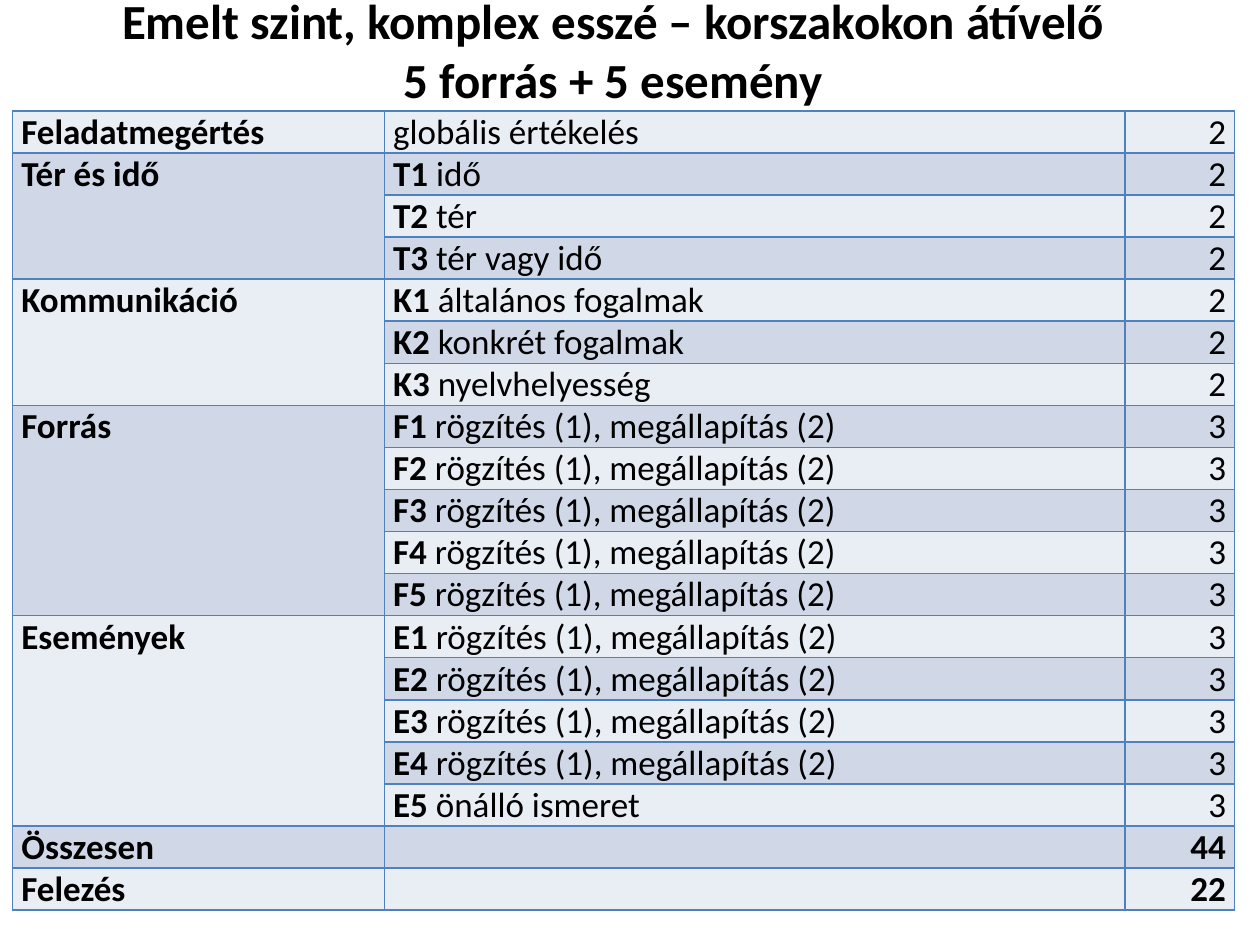
from lxml import etree
from pptx import Presentation
from pptx import util as u
from pptx.dml.color import RGBColor
from pptx.enum import text
from pptx.oxml import ns

TITLE = ["Emelt szint, komplex esszé – korszakokon átívelő", "5 forrás + 5 esemény"]
SOURCE_TASK = "rögzítés (1), megállapítás (2)"
GROUPS = [
    ("Feladatmegértés", "", ["globális értékelés"], 2),
    ("Tér és idő", "T", ["idő", "tér", "tér vagy idő"], 2),
    ("Kommunikáció", "K", ["általános fogalmak", "konkrét fogalmak", "nyelvhelyesség"], 2),
    ("Forrás", "F", [SOURCE_TASK] * 5, 3),
    ("Események", "E", [SOURCE_TASK] * 4 + ["önálló ismeret"], 3),
]
TOTALS = [("Összesen", 44), ("Felezés", 22)]
COLUMN_WIDTHS = [2.95, 5.88, 0.87]
TABLE_HEIGHT = 6.33
BANDS = ["E9EDF4", "D0D8E8"]
BORDER = "4F81BD"
BLACK = "000000"
LEFT = text.PP_ALIGN.LEFT
RIGHT = text.PP_ALIGN.RIGHT
CENTER = text.PP_ALIGN.CENTER
CELL_FORMAT = {
    "margin_left": u.Inches(0.07),
    "margin_right": u.Inches(0.07),
    "margin_top": 0,
    "margin_bottom": 0,
    "vertical_anchor": text.MSO_ANCHOR.TOP,
}
TITLE_BOX = {
    "left": u.Inches(0.1),
    "top": u.Inches(-0.13),
    "width": u.Inches(9.53),
    "height": u.Inches(1.04),
}
TITLE_FRAME = {
    "word_wrap": True,
    "auto_size": text.MSO_AUTO_SIZE.SHAPE_TO_FIT_TEXT,
    "vertical_anchor": text.MSO_ANCHOR.MIDDLE,
}


def apply_format(target, values):
    for name, value in values.items():
        setattr(target, name, value)


def set_color(color_format, hex_color):
    color_format.rgb = RGBColor.from_string(hex_color)


def write(paragraph, runs, size, alignment):
    paragraph.alignment = alignment
    for content, bold in runs:
        run = paragraph.add_run()
        run.text = content
        apply_format(run.font, {"name": "Calibri", "size": u.Pt(size), "bold": bold})
        set_color(run.font.color, BLACK)


def add_borders(cell):
    properties = cell._tc.get_or_add_tcPr()
    for side in ("a:lnL", "a:lnR", "a:lnT", "a:lnB"):
        line = etree.SubElement(properties, ns.qn(side), w=str(u.Pt(1)))
        fill = etree.SubElement(line, ns.qn("a:solidFill"))
        etree.SubElement(fill, ns.qn("a:srgbClr"), val=BORDER)


def build_rows():
    rows, spans = [], []
    for heading, code, tasks, points in GROUPS:
        spans.append((len(rows), len(tasks)))
        for number, task in enumerate(tasks, 1):
            label = [(heading, True)] if number == 1 else []
            detail = [(f"{code}{number}", True), (f" {task}", False)] if code else [(task, False)]
            rows.append((label, detail, [(str(points), False)]))
    for heading, points in TOTALS:
        rows.append(([(heading, True)], [], [(str(points), True)]))
    return rows, spans


def add_score_table(slide):
    rows, spans = build_rows()
    shape = slide.shapes.add_table(
        len(rows), len(COLUMN_WIDTHS), u.Inches(0.1), u.Inches(0.88),
        u.Inches(sum(COLUMN_WIDTHS)), u.Inches(TABLE_HEIGHT))
    table = shape.table
    for column, width in zip(table.columns, COLUMN_WIDTHS):
        column.width = u.Inches(width)
    for row_index, row in enumerate(rows):
        table.rows[row_index].height = u.Inches(TABLE_HEIGHT / len(rows))
        for column_index, runs in enumerate(row):
            cell = table.cell(row_index, column_index)
            apply_format(cell, CELL_FORMAT)
            add_borders(cell)
            cell.fill.solid()
            set_color(cell.fill.fore_color, BANDS[row_index % 2])
            alignment = RIGHT if column_index == 2 else LEFT
            write(cell.text_frame.paragraphs[0], runs, 20, alignment)
    for start, count in spans:
        if count > 1:
            table.cell(start, 0).merge(table.cell(start + count - 1, 0))


def add_title(slide):
    title = slide.shapes.title
    apply_format(title, TITLE_BOX)
    frame = title.text_frame
    apply_format(frame, TITLE_FRAME)
    for index, line in enumerate(TITLE):
        paragraph = frame.add_paragraph() if index else frame.paragraphs[0]
        write(paragraph, [(line, True)], 28, CENTER)


def main():
    presentation = Presentation()
    apply_format(presentation, {"slide_width": u.Inches(10), "slide_height": u.Inches(7.5)})
    slide = presentation.slides.add_slide(presentation.slide_layouts[5])
    add_title(slide)
    add_score_table(slide)
    presentation.save("out.pptx")


if __name__ == "__main__":
    main()
